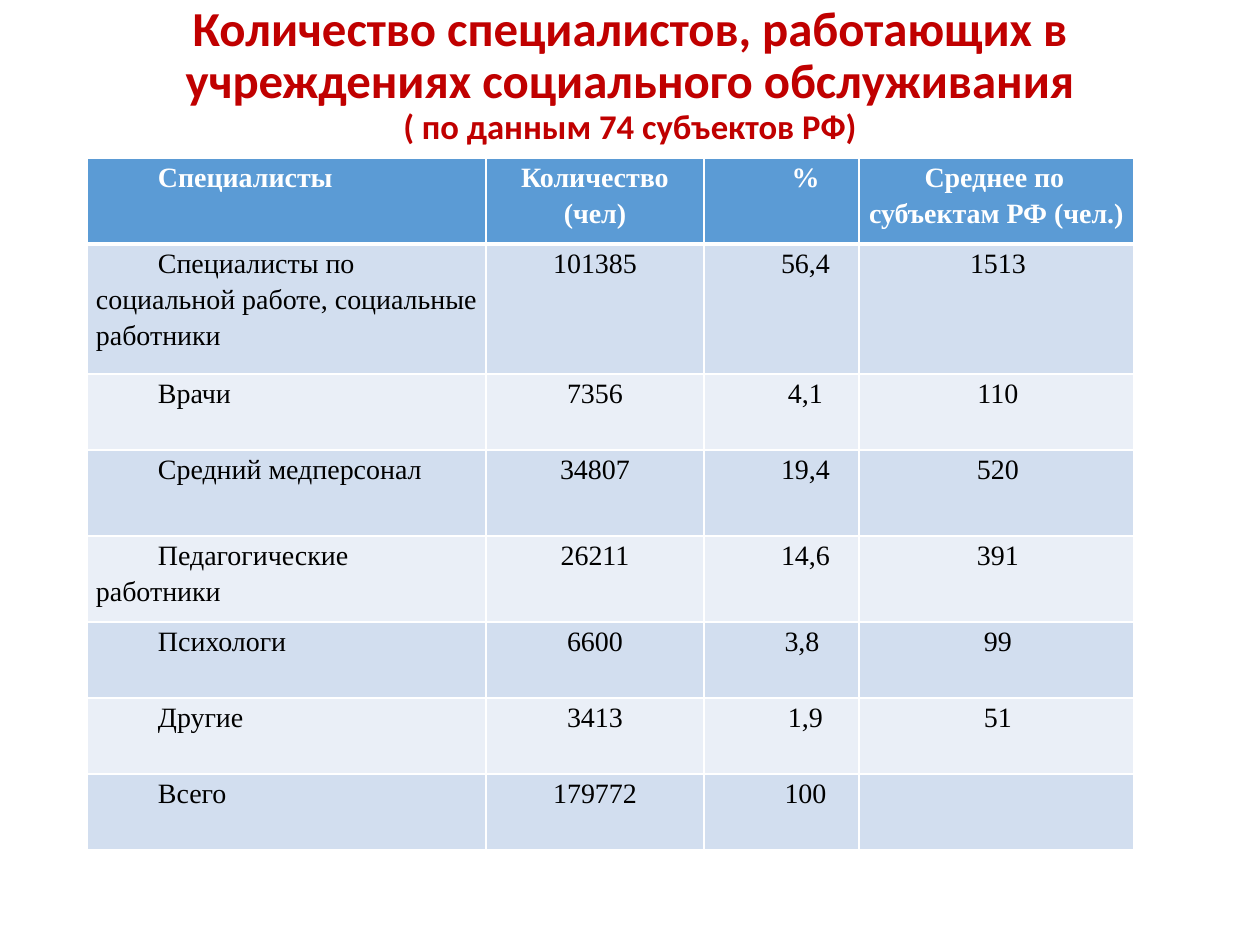
from lxml import etree
from pptx import Presentation, util as u
from pptx.dml.color import RGBColor
from pptx.enum import text
from pptx.oxml import ns

PX = u.Inches(1) // 126
WHITE, BLACK, RED, BLUE = "FFFFFF", "000000", "C00000", "5B9BD5"
BANDS = ("D2DEEF", "EAEFF7")
CENTER, LEFT, JUSTIFY = (text.PP_ALIGN.CENTER, text.PP_ALIGN.LEFT,
                         text.PP_ALIGN.JUSTIFY)

HEADINGS = ("Специалисты", "Количество (чел)", "%",
            "Среднее по \nсубъектам РФ (чел.) ")
STAFF = (
    ("Специалисты по социальной работе, социальные работники",
     "101385", "56,4", "1513"),
    ("Врачи", "7356", "4,1", "110"),
    ("Средний медперсонал", "34807", "19,4", "520"),
    ("Педагогические работники", "26211", "14,6", "391"),
    ("Психологи", "6600", "3,8 ", "99"),
    ("Другие", "3413", "1,9", "51"),
    ("Всего", "179772", "100", ""),
)
COLUMN_WIDTHS = (399, 218, 155, 275)
ROW_HEIGHTS = (86, 130, 76, 86, 86, 76, 76, 76)
FIRST_LINE_INDENTS = (62, 0, 48, 3)


def px(length):
    return u.Emu(length * PX)


def rgb(color):
    return RGBColor.from_string(color)


def write(paragraph, words, *, size, font, color, bold=False, align=CENTER,
          spacing=1.0, indent=0):
    paragraph.alignment = align
    paragraph.line_spacing = spacing
    properties = paragraph._p.get_or_add_pPr()
    properties.set("marL", "0")
    properties.set("indent", str(px(indent)))
    run = paragraph.add_run()
    run.text = words
    run.font.size = u.Pt(size)
    run.font.name = font
    run.font.bold = bold
    run.font.color.rgb = rgb(color)


def set_borders(cell, **widths):
    """Draw white cell borders; keys are L, R, T, B and values are points."""
    properties = cell._tc.get_or_add_tcPr()
    for position, (side, width) in enumerate(widths.items()):
        line = etree.Element(ns.qn(f"a:ln{side}"), w=str(u.Pt(width)))
        fill = etree.SubElement(line, ns.qn("a:solidFill"))
        etree.SubElement(fill, ns.qn("a:srgbClr"), val=WHITE)
        properties.insert(position, line)


def place_title(slide, left, top, width, height):
    title = slide.shapes.title
    title.left, title.top, title.width, title.height = map(
        px, (left, top, width, height))
    frame = title.text_frame
    frame.auto_size = text.MSO_AUTO_SIZE.NONE
    frame.word_wrap = True
    frame.vertical_anchor = text.MSO_ANCHOR.MIDDLE
    frame.margin_top, frame.margin_bottom = px(0), px(81)
    heading = frame.paragraphs[0]
    style = dict(font="Calibri", color=RED, bold=True, spacing=0.9)
    write(heading, "Количество специалистов, работающих в учреждениях "
          "социального обслуживания", size=27.9, **style)
    heading.add_line_break()
    write(heading, "( по данным 74 субъектов РФ)", size=19.8, **style)


def fill_cell(cell, words, row, column):
    is_header = row == 0
    cell.fill.solid()
    cell.fill.fore_color.rgb = rgb(BLUE if is_header else BANDS[(row - 1) % 2])
    cell.margin_left = cell.margin_right = px(9)
    cell.margin_top = cell.margin_bottom = px(0)
    set_borders(cell, L=1, R=1, T=3 if row == 1 else 1, B=3 if is_header else 1)
    if not words:
        return
    align = CENTER if column else JUSTIFY if is_header else LEFT
    for number, line in enumerate(words.split("\n")):
        frame = cell.text_frame
        paragraph = frame.add_paragraph() if number else frame.paragraphs[0]
        write(paragraph, line, size=16, font="Times New Roman",
              color=WHITE if is_header else BLACK, bold=is_header,
              align=align, spacing=1.15,
              indent=0 if number else FIRST_LINE_INDENTS[column])


def place_staff_table(slide, left, top):
    records = (HEADINGS, *STAFF)
    table = slide.shapes.add_table(
        len(records), len(HEADINGS), px(left), px(top),
        px(sum(COLUMN_WIDTHS)), px(sum(ROW_HEIGHTS))).table
    for column, width in zip(table.columns, COLUMN_WIDTHS):
        column.width = px(width)
    for row, height in zip(table.rows, ROW_HEIGHTS):
        row.height = px(height)
    for row, record in enumerate(records):
        for column, words in enumerate(record):
            fill_cell(table.cell(row, column), words, row, column)


def main():
    deck = Presentation()
    deck.slide_width, deck.slide_height = px(1260), px(945)
    slide = deck.slides.add_slide(deck.slide_layouts.get_by_name("Title Only"))
    place_title(slide, 87, 50, 1086, 132)
    place_staff_table(slide, 87, 158)
    deck.save("out.pptx")


if __name__ == "__main__":
    main()
